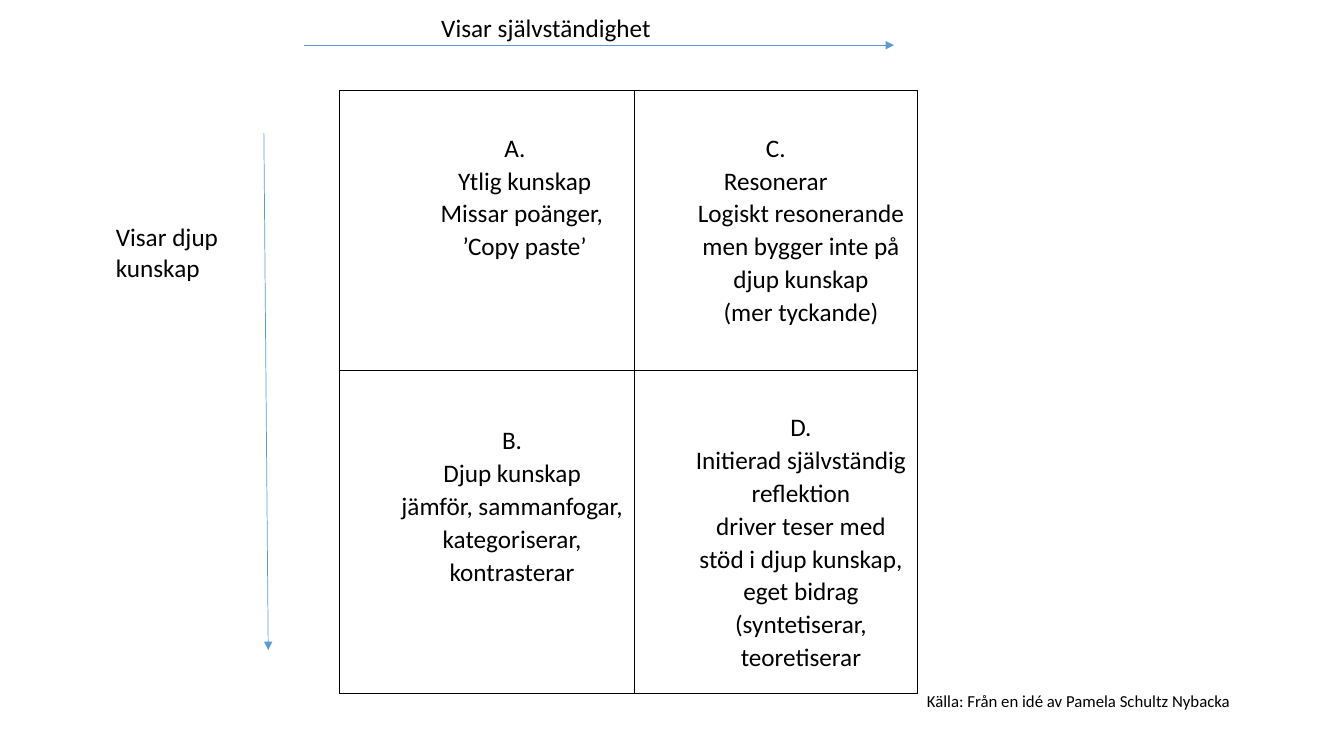
from lxml import etree
from pptx import Presentation
from pptx.dml.color import RGBColor
from pptx.enum.shapes import MSO_CONNECTOR
from pptx.enum.text import MSO_AUTO_SIZE, PP_ALIGN
from pptx.oxml.ns import qn
from pptx.util import Cm, Pt

STRAIGHT = MSO_CONNECTOR.STRAIGHT
CENTER = PP_ALIGN.CENTER
GROW = MSO_AUTO_SIZE.SHAPE_TO_FIT_TEXT
BLACK = "000000"
BLUE = "5B9BD5"
INDENT = 1.27
COLUMN_WIDTHS = (7.42, 7.14)
ROW_HEIGHTS = (7.04, 8.15)

# Each quadrant: top margin, then (text, left indent) pairs, in centimetres.
QUADRANTS = (
    (
        (1.01, (
            (" A.", INDENT),
            ("Ytlig kunskap", 1.5 * INDENT),
            ("Missar poänger, \v’Copy paste’", 1.5 * INDENT),
        )),
        (1.01, (
            ("C.\vResonerar", 0),
            ("Logiskt resonerande", INDENT),
            ("men bygger inte på", INDENT),
            ("djup kunskap", INDENT),
            ("(mer tyckande)", INDENT),
        )),
    ),
    (
        (1.34, (
            ("B.", INDENT),
            ("Djup kunskap", INDENT),
            ("jämför, sammanfogar, kategoriserar, kontrasterar", INDENT),
        )),
        (1.01, (
            ("D.", INDENT),
            ("Initierad självständig reflektion", INDENT),
            ("driver teser med stöd i djup kunskap, eget bidrag "
             "(syntetiserar, teoretiserar", INDENT),
        )),
    ),
)


def color(value):
    """Turn a hex string into a colour."""
    return RGBColor.from_string(value)


def apply_format(target, values):
    """Set each attribute of the target from a dict."""
    for name, value in values.items():
        setattr(target, name, value)


def write_paragraph(para, text, size):
    """Fill a paragraph with text in the slide's font."""
    para.text = text
    for span in para.runs:
        apply_format(span.font, {"name": "Calibri", "size": Pt(size)})
        span.font.color.rgb = color(BLACK)


def add_label(slide, place, lines, size=18):
    """Add a text box with one paragraph per line."""
    box = slide.shapes.add_textbox(*map(Cm, place))
    frame = box.text_frame
    apply_format(frame, {"word_wrap": True, "auto_size": GROW})
    for index, line in enumerate(lines):
        para = frame.add_paragraph() if index else frame.paragraphs[0]
        write_paragraph(para, line, size)


def add_arrow(slide, ends):
    """Add a thin blue line with a triangle at its end."""
    arrow = slide.shapes.add_connector(STRAIGHT, *map(Cm, ends))
    arrow.line.width = Pt(0.5)
    arrow.line.color.rgb = color(BLUE)
    properties = arrow.line._get_or_add_ln()
    etree.SubElement(properties, qn("a:tailEnd"), type="triangle")
    etree.SubElement(arrow._element.spPr, qn("a:effectLst"))


def add_borders(cell):
    """Draw a black line on all four sides of a cell."""
    properties = cell._tc.get_or_add_tcPr()
    for index, side in enumerate(("lnL", "lnR", "lnT", "lnB")):
        line = etree.Element(qn("a:" + side), w=str(Pt(1)))
        fill = etree.SubElement(line, qn("a:solidFill"))
        etree.SubElement(fill, qn("a:srgbClr"), val=BLACK)
        properties.insert(index, line)


def fill_quadrant(cell, top, lines):
    """Write the indented, centred lines of one quadrant."""
    apply_format(cell, {
        "margin_left": Cm(0.18), "margin_right": Cm(0.18),
        "margin_top": Cm(top), "margin_bottom": Cm(0),
    })
    cell.fill.background()
    add_borders(cell)
    for index, (text, indent) in enumerate(lines):
        frame = cell.text_frame
        para = frame.add_paragraph() if index else frame.paragraphs[0]
        write_paragraph(para, text, 18)
        apply_format(para, {"alignment": CENTER, "line_spacing": 1.07})
        para._p.get_or_add_pPr().set("marL", str(Cm(indent)))


def add_matrix(slide, left, top):
    """Add the two by two table of quadrants."""
    size = (sum(COLUMN_WIDTHS), sum(ROW_HEIGHTS))
    frame = slide.shapes.add_table(2, 2, *map(Cm, (left, top, *size)))
    table = frame.table
    apply_format(table, {"first_row": False, "horz_banding": False})
    for column, width in zip(table.columns, COLUMN_WIDTHS):
        column.width = Cm(width)
    for row, height, quadrants in zip(table.rows, ROW_HEIGHTS, QUADRANTS):
        row.height = Cm(height)
        for cell, (margin, lines) in zip(row.cells, quadrants):
            fill_quadrant(cell, margin, lines)


def main():
    """Build the slide and save the deck."""
    deck = Presentation()
    apply_format(deck, {"slide_width": Cm(33.87), "slide_height": Cm(19.05)})
    slide = deck.slides.add_slide(deck.slide_layouts[6])
    add_matrix(slide, 8.56, 2.29)
    add_arrow(slide, (6.65, 3.35, 6.76, 16.38))
    add_arrow(slide, (7.67, 1.14, 22.53, 1.14))
    add_label(slide, (2.67, 5.46, 3.35, 1.8), ("Visar djup", "kunskap"))
    add_label(slide, (10.87, 0.18, 9.93, 1.02), ("Visar självständighet",))
    add_label(slide, (23.11, 17.27, 9.68, 0.76),
              ("Källa: Från en idé av Pamela Schultz Nybacka",), 12)
    deck.save("out.pptx")


if __name__ == "__main__":
    main()
